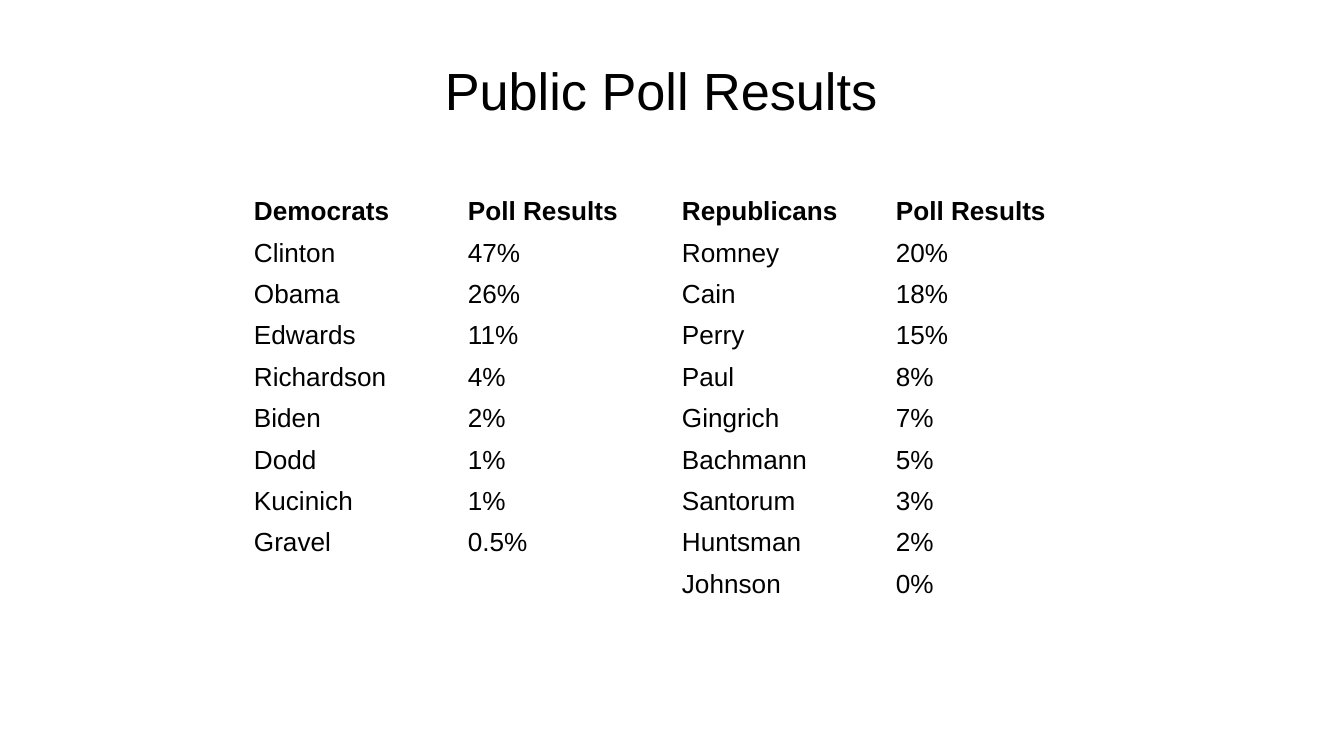
from dataclasses import dataclass
from itertools import zip_longest

from lxml.etree import SubElement
from pptx import Presentation
from pptx.dml.color import RGBColor
from pptx.enum.text import MSO_ANCHOR, PP_ALIGN
from pptx.oxml.ns import qn
from pptx.util import Emu, Pt

EMU_PER_PX = 914400 / 134.4
COLORS = {"background": "FFFFFF", "text": "000000"}
FONT = "Arial"
CELL_SIZE = 14


@dataclass
class Box:
    x: int
    y: int
    w: int
    h: int


@dataclass
class Party:
    name: str
    polls: list[tuple[str, str]]


PARTIES = [
    Party("Democrats", [
        ("Clinton", "47%"), ("Obama", "26%"), ("Edwards", "11%"),
        ("Richardson", "4%"), ("Biden", "2%"), ("Dodd", "1%"),
        ("Kucinich", "1%"), ("Gravel", "0.5%"),
    ]),
    Party("Republicans", [
        ("Romney", "20%"), ("Cain", "18%"), ("Perry", "15%"),
        ("Paul", "8%"), ("Gingrich", "7%"), ("Bachmann", "5%"),
        ("Santorum", "3%"), ("Huntsman", "2%"), ("Johnson", "0%"),
    ]),
]


def px(n: int) -> Emu:
    return Emu(round(n * EMU_PER_PX))


def set_attrs(obj, values: dict) -> None:
    for name, value in values.items():
        setattr(obj, name, value)


def margins(side: int, edge: int) -> dict:
    return {"margin_left": px(side), "margin_right": px(side),
            "margin_top": px(edge), "margin_bottom": px(edge)}


def add_text(p, text: str, size: int, bold: bool = False) -> None:
    r = p.add_run()
    r.text = text
    set_attrs(r.font, {"name": FONT, "size": Pt(size), "bold": bold})
    r.font.color.rgb = RGBColor.from_string(COLORS["text"])


def add_title(s, box: Box, text: str) -> None:
    sp = s.shapes.add_textbox(px(box.x), px(box.y), px(box.w), px(box.h))
    tf = sp.text_frame
    set_attrs(tf, {"word_wrap": True, "vertical_anchor": MSO_ANCHOR.MIDDLE,
                   **margins(10, 5)})
    p = tf.paragraphs[0]
    p.alignment = PP_ALIGN.CENTER
    add_text(p, text, 28)


def table_rows(parties: list[Party]) -> list[list[str]]:
    """Place the parties side by side, padding the shorter list."""
    columns = [[(party.name, "Poll Results"), *party.polls] for party in parties]
    return [[text for pair in pairs for text in pair]
            for pairs in zip_longest(*columns, fillvalue=("", ""))]


def add_table(s, x: int, y: int, col_w: int, row_h: int,
              rows: list[list[str]]) -> None:
    n_rows, n_cols = len(rows), len(rows[0])
    table = s.shapes.add_table(n_rows, n_cols, px(x), px(y),
                               px(col_w * n_cols), px(row_h * n_rows)).table
    set_attrs(table, {"first_row": False, "horz_banding": False})
    for col in table.columns:
        col.width = px(col_w)
    for i, texts in enumerate(rows):
        table.rows[i].height = px(row_h)
        for j, text in enumerate(texts):
            cell = table.cell(i, j)
            cell.fill.background()
            set_attrs(cell, margins(11, 5))
            p = cell.text_frame.paragraphs[0]
            if text:
                add_text(p, text, CELL_SIZE, bold=i == 0)
            else:
                # Keep an empty cell from stretching its row
                SubElement(p._p, qn("a:endParaRPr"), sz=str(CELL_SIZE * 100))


def main() -> None:
    prs = Presentation()
    set_attrs(prs, {"slide_width": px(1344), "slide_height": px(756)})
    s = prs.slides.add_slide(prs.slide_layouts[6])
    s.background.fill.solid()
    s.background.fill.fore_color.rgb = RGBColor.from_string(COLORS["background"])

    # Title
    add_title(s, Box(90, 39, 1142, 102), "Public Poll Results")

    # Poll table
    add_table(s, 243, 192, 214, 41, table_rows(PARTIES))

    prs.save("out.pptx")


if __name__ == "__main__":
    main()
